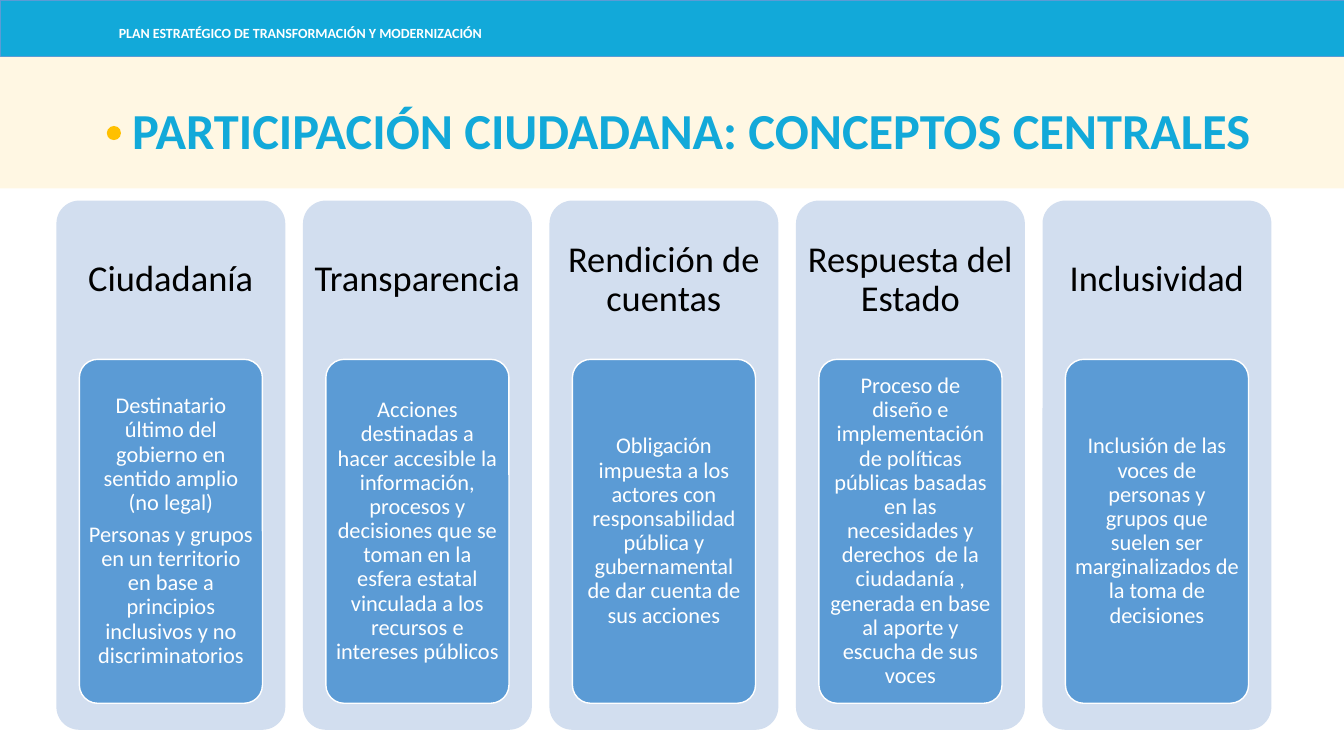
from lxml.etree import SubElement
from pptx import Presentation
from pptx.dml.color import RGBColor
from pptx.enum.shapes import MSO_SHAPE as Shape
from pptx.enum.text import MSO_ANCHOR as Anchor, PP_ALIGN as Align
from pptx.oxml.ns import qn
from pptx.util import Inches, Pt

WIDTH, HEIGHT = 13.33, 7.5
BAND_HEIGHT, TITLE_HEIGHT = 0.56, 1.31
COLUMN_WIDTH, COLUMN_PITCH = 2.27, 2.445

WHITE = RGBColor(0xFF, 0xFF, 0xFF)
BLACK = RGBColor(0x00, 0x00, 0x00)
CYAN = RGBColor(0x12, 0xA9, 0xD9)
CREAM = RGBColor(0xFF, 0xF2, 0xCC)
GOLD = RGBColor(0xFF, 0xC0, 0x00)
PALE_BLUE = RGBColor(0xD2, 0xDE, 0xEF)
BLUE = RGBColor(0x5B, 0x9B, 0xD5)

CONCEPTS = [
    ("Ciudadanía", [
        "Destinatario último del gobierno en sentido amplio (no legal)",
        "Personas y grupos en un territorio en base a principios inclusivos "
        "y no discriminatorios"]),
    ("Transparencia", [
        "Acciones destinadas a hacer accesible la información, procesos y "
        "decisiones que se toman en la esfera estatal vinculada a los "
        "recursos e intereses públicos"]),
    ("Rendición de cuentas", [
        "Obligación impuesta a los actores con responsabilidad pública y "
        "gubernamental de dar cuenta de sus acciones"]),
    ("Respuesta del Estado", [
        "Proceso de diseño e implementación de políticas públicas basadas en "
        "las necesidades y derechos  de la ciudadanía , generada en base al "
        "aporte y escucha de sus voces"]),
    ("Inclusividad", [
        "Inclusión de las voces de personas y grupos que suelen ser "
        "marginalizados de la toma de decisiones"]),
]


def add_block(slide, kind, box, fill, line=None, line_width=1):
    """Draw a flat filled shape in the box, outlined only if a line colour is given."""
    block = slide.shapes.add_shape(kind, *map(Inches, box))
    block.shadow.inherit = False
    block.fill.solid()
    block.fill.fore_color.rgb = fill
    if line is None:
        block.line.fill.background()
    else:
        block.line.color.rgb = line
        block.line.width = Pt(line_width)
    if kind == Shape.ROUNDED_RECTANGLE:
        block.adjustments[0] = 0.1
    return block


def write(holder, texts, size, color, bold=False, align=Align.CENTER,
          anchor=Anchor.MIDDLE, spacing=0.9, after=0, margins=(0.1, 0.05)):
    """Fill a shape or text box with evenly styled paragraphs."""
    frame = holder.text_frame
    frame.word_wrap = True
    frame.vertical_anchor = anchor
    frame.margin_left = frame.margin_right = Inches(margins[0])
    frame.margin_top = frame.margin_bottom = Inches(margins[1])
    for index, text in enumerate(texts):
        paragraph = frame.add_paragraph() if index else frame.paragraphs[0]
        paragraph.text = text
        paragraph.alignment = align
        paragraph.line_spacing = spacing
        paragraph.space_after = Pt(after)
        paragraph.font.name = "Calibri"
        paragraph.font.size = Pt(size)
        paragraph.font.bold = bold
        paragraph.font.color.rgb = color


def add_text(slide, box, texts, size, color, **style):
    """Place a text box with the given style."""
    write(slide.shapes.add_textbox(*map(Inches, box)), texts, size, color, **style)


def add_plan_band(slide, left, top, width, height):
    """Draw the top band with the name of the plan."""
    add_block(slide, Shape.RECTANGLE, (left, top, width, height), CYAN, BLUE, 0.5)
    add_text(slide, (left + 1.08, top + 0.23, 3.9, 0.22),
             ["PLAN ESTRATÉGICO DE TRANSFORMACIÓN Y MODERNIZACIÓN"], 10, WHITE,
             bold=True, align=Align.LEFT, anchor=Anchor.TOP, spacing=0.8)


def add_title_band(slide, left, top, width, height):
    """Draw the translucent band with the title and its dot."""
    band = add_block(slide, Shape.RECTANGLE, (left, top, width, height), CREAM)
    tint = band.fill._xPr.find(".//" + qn("a:srgbClr"))
    SubElement(tint, qn("a:alpha"), val="54000")
    add_text(slide, (left + 1.2, top + 0.4, 11.32, 0.68),
             ["PARTICIPACIÓN CIUDADANA: CONCEPTOS CENTRALES"], 36, CYAN,
             bold=True, anchor=Anchor.BOTTOM)
    add_block(slide, Shape.OVAL, (left + 1.06, top + 0.69, 0.14, 0.14), GOLD)


def add_concept(slide, left, top, width, height, heading, descriptions):
    """Draw one column: heading in the top 30 %, description card in the next 65 %."""
    add_block(slide, Shape.ROUNDED_RECTANGLE, (left, top, width, height), PALE_BLUE)
    add_text(slide, (left, top, width, 0.3 * height), [heading], 26, BLACK,
             after=9.1, margins=(0.11, 0.11))
    card_box = (left + 0.1 * width, top + 0.3 * height, 0.8 * width, 0.65 * height)
    card = add_block(slide, Shape.ROUNDED_RECTANGLE, card_box, BLUE, WHITE)
    write(card, descriptions, 16, WHITE, after=5.6, margins=(0.04, 0.03))


def main():
    """Build the slide and save it."""
    deck = Presentation()
    deck.slide_width, deck.slide_height = Inches(WIDTH), Inches(HEIGHT)
    slide = deck.slides.add_slide(deck.slide_layouts[6])
    add_title_band(slide, 0, BAND_HEIGHT, WIDTH, TITLE_HEIGHT)
    add_plan_band(slide, 0, 0, WIDTH, BAND_HEIGHT)
    for column, (heading, descriptions) in enumerate(CONCEPTS):
        add_concept(slide, 0.56 + column * COLUMN_PITCH, 1.99, COLUMN_WIDTH, 5.25,
                    heading, descriptions)
    deck.save("out.pptx")


if __name__ == "__main__":
    main()
